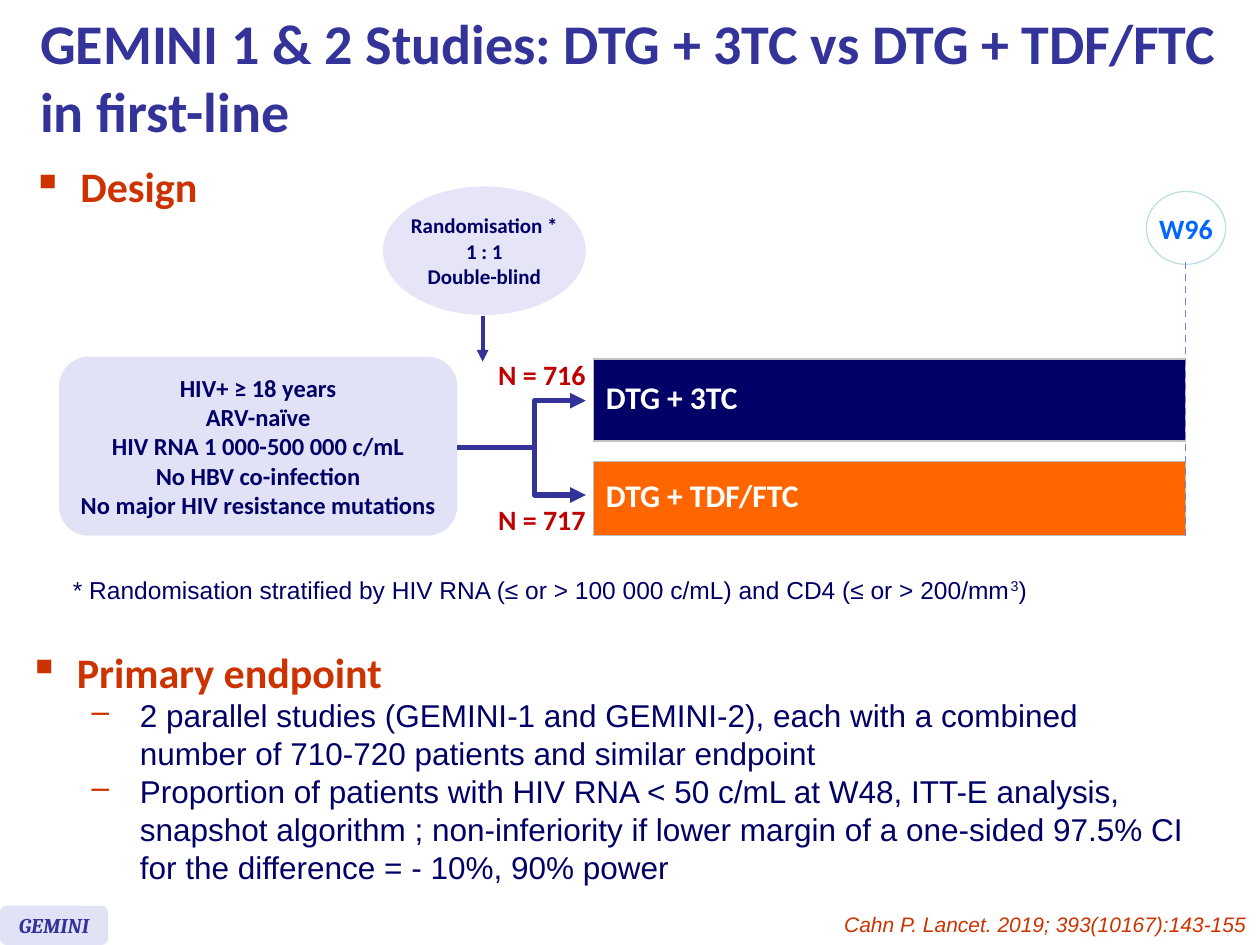
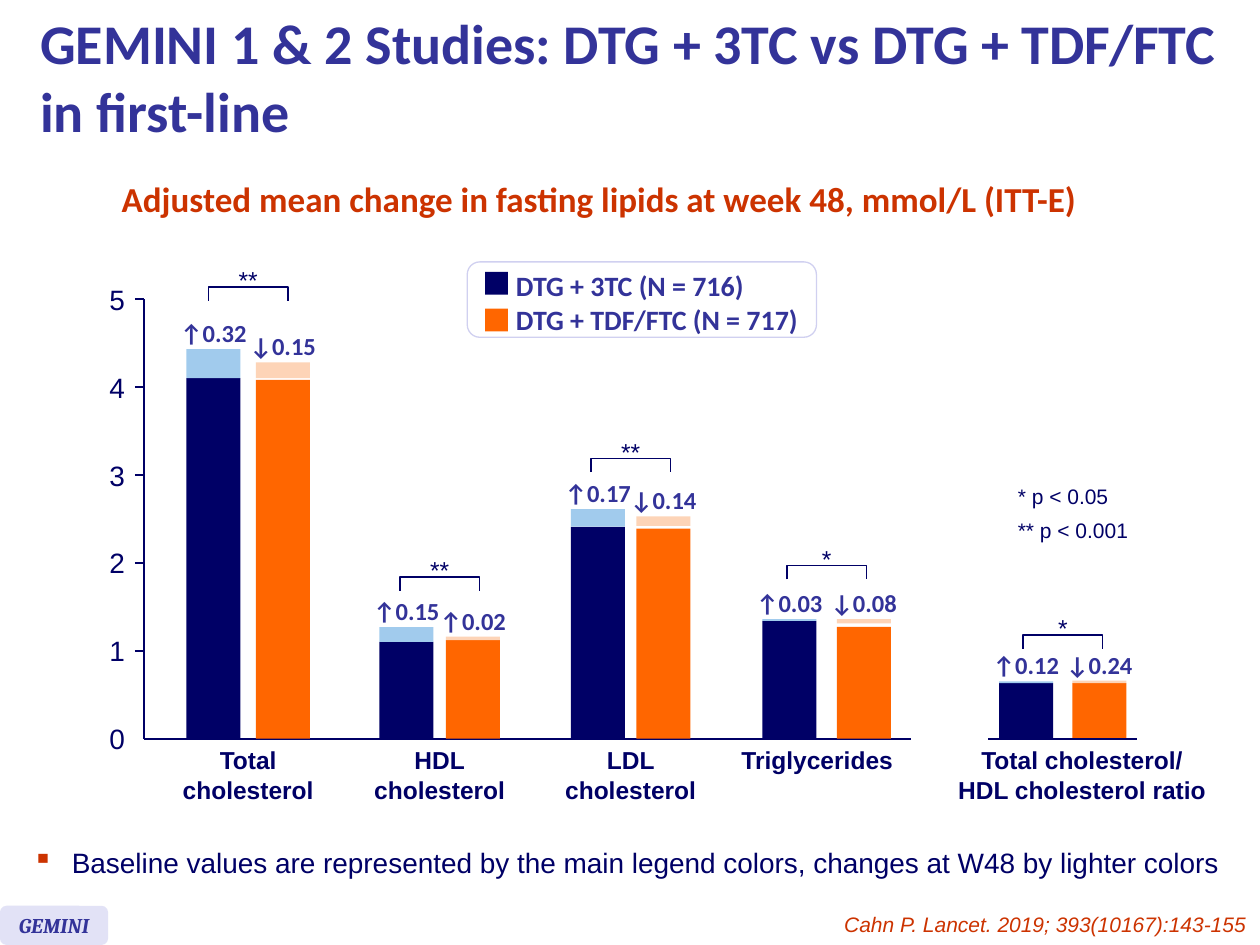
from collections import namedtuple
from dataclasses import dataclass

from lxml import etree
from pptx import Presentation
from pptx.dml.color import RGBColor
from pptx.enum.dml import MSO_LINE
from pptx.enum.shapes import MSO_CONNECTOR, MSO_SHAPE
from pptx.enum.text import MSO_ANCHOR, PP_ALIGN
from pptx.oxml.ns import qn
from pptx.util import Cm, Pt

LEFT, CENTER, RIGHT = PP_ALIGN.LEFT, PP_ALIGN.CENTER, PP_ALIGN.RIGHT
TOP, MIDDLE = MSO_ANCHOR.TOP, MSO_ANCHOR.MIDDLE
RECTANGLE, ROUNDED, OVAL = MSO_SHAPE.RECTANGLE, MSO_SHAPE.ROUNDED_RECTANGLE, MSO_SHAPE.OVAL
BRACKET = MSO_SHAPE.RIGHT_BRACKET
STRAIGHT, ELBOW = MSO_CONNECTOR.STRAIGHT, MSO_CONNECTOR.ELBOW
DASH = MSO_LINE.DASH

Box = namedtuple("Box", "left top width height")
Style = namedtuple("Style", "size font color bold italic", defaults=(False, False))
Group = namedtuple("Group", "name name_shift lefts baselines change_starts tops changes stars bracket")


@dataclass(frozen=True)
class Theme:
    navy: str = "000066"
    indigo: str = "333399"
    orange: str = "FF6600"
    red: str = "CC3300"
    white: str = "FFFFFF"
    lavender: str = "E2E2F6"
    pale_lavender: str = "E5E5F7"
    legend_line: str = "D0D0F0"
    light_blue: str = "A1CBED"
    light_orange: str = "FDD4B7"
    week_line: str = "BBE0E3"
    dash_line: str = "7E7ED4"
    table_line: str = "C0C0C0"
    title: Style = Style(32, "Calibri", "333399", True)
    heading: Style = Style(24, "Calibri", "CC3300", True)
    chart_title: Style = Style(20, "Calibri", "CC3300", True)
    body: Style = Style(18, "Arial", "000066")
    arm: Style = Style(18, "Calibri", "FFFFFF", True)
    count: Style = Style(16, "Calibri", "C00000", True)
    week: Style = Style(16, "Calibri", "0066FF", True)
    legend: Style = Style(16, "Calibri", "333399", True)
    axis: Style = Style(16, "Arial", "000066")
    criteria: Style = Style(14, "Calibri", "000066", True)
    change: Style = Style(14, "Calibri", "333399", True)
    category: Style = Style(14, "Arial", "000066", True)
    note: Style = Style(14, "Arial", "000066")
    small: Style = Style(12, "Arial", "000066")
    randomisation: Style = Style(12, "Calibri", "000066", True)
    badge: Style = Style(12, "Cambria", "333399", True, True)
    citation: Style = Style(12, "Arial", "CC3300", False, True)


THEME = Theme()
TITLE = "GEMINI 1 & 2 Studies: DTG + 3TC vs DTG + TDF/FTC in first-line"
CITATION = "Cahn P. Lancet. 2019; 393(10167):143-155"
CRITERIA = ["HIV+ ≥ 18 years", "ARV-naïve", "HIV RNA 1 000-500 000 c/mL",
            "No HBV co-infection", "No major HIV resistance mutations"]
ENDPOINTS = [
    "2 parallel studies (GEMINI-1 and GEMINI-2), each with a combined number of "
    "710-720 patients and similar endpoint",
    "Proportion of patients with HIV RNA < 50 c/mL at W48, ITT-E analysis, snapshot algorithm ; "
    "non-inferiority if lower margin of a one-sided 97.5% CI for the difference = - 10%, 90% power",
]
LIPIDS = [
    Group("Total\ncholesterol", 0, (0.86, 2.26), (4.1, 4.08), (4.1, 4.1), (4.43, 4.28),
          ("↑0.32", "↓0.15"), "**", 5.06),
    Group("HDL\ncholesterol", 0, (4.75, 6.09), (1.1, 1.12), (1.1, 1.12), (1.27, 1.16),
          ("↑0.15", "↑0.02"), "**", 1.76),
    Group("LDL\ncholesterol", 0, (8.61, 9.93), (2.41, 2.39), (2.41, 2.42), (2.61, 2.53),
          ("↑0.17", "↓0.14"), "**", 3.11),
    Group("Triglycerides", -0.19, (12.47, 13.97), (1.34, 1.27), (1.34, 1.31), (1.36, 1.36),
          ("↑0.03", "↓0.08"), "*", 1.89),
    Group("Total cholesterol/\nHDL cholesterol ratio", 0.39, (17.24, 18.72), (0.63, 0.63),
          (0.63, 0.63), (0.65, 0.66), ("↑0.12", "↓0.24"), "*", 1.1),
]


def rgb(color):
    return RGBColor.from_string(color)


def lengths(box):
    return [Cm(value) for value in box]


def inside(box, left, top, width, height):
    return Box(box.left + left, box.top + top, width, height)


def apply_style(paragraph, style, align=LEFT):
    paragraph.alignment = align
    font = paragraph.font
    font.size, font.name = Pt(style.size), style.font
    font.bold, font.italic = style.bold, style.italic
    font.color.rgb = rgb(style.color)


def fill_text(frame, lines, style, align=LEFT, anchor=TOP, wrap=False):
    frame.word_wrap = wrap
    frame.vertical_anchor = anchor
    for index, line in enumerate(lines):
        paragraph = frame.add_paragraph() if index else frame.paragraphs[0]
        paragraph.text = line
        apply_style(paragraph, style, align)


def add_text(slide, box, text, style, align=LEFT, anchor=TOP, wrap=False):
    frame = slide.shapes.add_textbox(*lengths(box)).text_frame
    fill_text(frame, [text], style, align, anchor, wrap)
    return frame


def add_bullet(paragraph, text, mark, margin, hanging, style):
    paragraph.text = text
    properties = paragraph._p.get_or_add_pPr()
    properties.set("marL", str(Cm(margin)))
    properties.set("indent", str(-Cm(hanging)))
    color = etree.SubElement(properties, qn("a:buClr"))
    etree.SubElement(color, qn("a:srgbClr"), val=THEME.red)
    etree.SubElement(properties, qn("a:buChar"), char=mark)
    apply_style(paragraph, style)


def add_bullet_box(slide, box, text, margin, style):
    frame = slide.shapes.add_textbox(*lengths(box)).text_frame
    frame.word_wrap = True
    add_bullet(frame.paragraphs[0], text, "▪", margin, margin, style)
    return frame


def add_shape(slide, kind, box, fill=None, line=None):
    shape = slide.shapes.add_shape(kind, *lengths(box))
    shape.shadow.inherit = False
    if fill:
        shape.fill.solid()
        shape.fill.fore_color.rgb = rgb(fill)
    else:
        shape.fill.background()
    if line:
        shape.line.color.rgb = rgb(line)
        shape.line.width = Pt(0.75)
    else:
        shape.line.fill.background()
    return shape


def add_line(slide, start, end, color, width, kind=STRAIGHT, arrow=False):
    connector = slide.shapes.add_connector(kind, *lengths(start + end))
    connector.line.color.rgb = rgb(color)
    connector.line.width = Pt(width)
    if arrow:
        etree.SubElement(connector.line._get_or_add_ln(), qn("a:tailEnd"), type="triangle")
    etree.SubElement(connector._element.spPr, qn("a:effectLst"))
    return connector


def set_bend(connector, percent):
    geometry = connector._element.spPr.find(qn("a:prstGeom"))
    for guides in geometry.findall(qn("a:avLst")):
        geometry.remove(guides)
    guides = etree.SubElement(geometry, qn("a:avLst"))
    etree.SubElement(guides, qn("a:gd"), name="adj1", fmla=f"val {percent * 1000}")


def add_frame(presentation):
    slide = presentation.slides.add_slide(presentation.slide_layouts[6])
    add_text(slide, Box(0.56, 0, 24.84, 3.07), TITLE, THEME.title, anchor=MIDDLE, wrap=True)
    badge = add_shape(slide, ROUNDED, Box(0, 18.26, 2.18, 0.79), THEME.lavender)
    fill_text(badge.text_frame, ["GEMINI"], THEME.badge, CENTER, MIDDLE)
    add_text(slide, Box(4.27, 18.26, 21.11, 0.76), CITATION, THEME.citation, RIGHT, wrap=True)
    return slide


def add_arm(slide, box, name, fill):
    table = slide.shapes.add_table(1, 1, *lengths(box)).table
    table.first_row = table.horz_banding = False
    cell = table.cell(0, 0)
    fill_text(cell.text_frame, [name], THEME.arm, wrap=True)
    cell.text_frame.paragraphs[0].line_spacing = 0.8
    cell.vertical_anchor = MIDDLE
    properties = cell._tc.get_or_add_tcPr()
    for side in ("a:lnL", "a:lnR", "a:lnT", "a:lnB"):
        border = etree.SubElement(properties, qn(side), w=str(Pt(1)))
        solid = etree.SubElement(border, qn("a:solidFill"))
        etree.SubElement(solid, qn("a:srgbClr"), val=THEME.table_line)
    cell.fill.solid()
    cell.fill.fore_color.rgb = rgb(fill)


def add_trial_scheme(slide, box):
    population = add_shape(slide, ROUNDED, inside(box, 0, 3.43, 8.03, 3.61), THEME.lavender)
    fill_text(population.text_frame, CRITERIA, THEME.criteria, CENTER, MIDDLE)
    randomisation = add_shape(slide, OVAL, inside(box, 6.53, 0, 4.09, 2.59), THEME.pale_lavender)
    fill_text(randomisation.text_frame, ["Randomisation *", "1 : 1", "Double-blind"],
              THEME.randomisation, CENTER, MIDDLE)
    arrow_x = box.left + 8.54
    add_line(slide, (arrow_x, box.top + 2.62), (arrow_x, box.top + 3.53), THEME.indigo, 2.25, arrow=True)

    arms = [("DTG + 3TC", THEME.navy, 3.48, 1.65, 4.32, "N = 716", 3.33),
            ("DTG + TDF/FTC", THEME.orange, 5.54, 1.5, 6.22, "N = 717", 6.25)]
    for name, fill, top, height, arrow_y, count, count_top in arms:
        add_arm(slide, inside(box, 10.77, top, 11.94, height), name, fill)
        branch = add_line(slide, (box.left + 8.03, box.top + 5.26), (box.left + 10.62, box.top + arrow_y),
                          THEME.indigo, 3, ELBOW, True)
        set_bend(branch, 60)
        add_text(slide, inside(box, 8.59, count_top, 2.29, 0.94), count, THEME.count, CENTER)

    week = add_shape(slide, OVAL, inside(box, 21.92, 0.1, 1.6, 1.47), THEME.white, THEME.week_line)
    fill_text(week.text_frame, ["W96"], THEME.week, CENTER, MIDDLE)
    week_x = box.left + 22.71
    marker = add_line(slide, (week_x, box.top + 1.52), (week_x, box.top + 7.11), THEME.dash_line, 1)
    marker.line.dash_style = DASH


def add_stratification_note(slide, box):
    frame = add_text(slide, box, "* Randomisation stratified by HIV RNA (≤ or > 100 000 c/mL) "
                     "and CD4 (≤ or > 200/mm", THEME.note, wrap=True)
    exponent, closing = (frame.paragraphs[0].add_run() for _ in range(2))
    exponent.text, closing.text = "3", ")"
    exponent._r.get_or_add_rPr().set("baseline", "30000")


def add_endpoint(slide, box):
    frame = add_bullet_box(slide, box, "Primary endpoint", 0.97, THEME.heading)
    for endpoint in ENDPOINTS:
        paragraph = frame.add_paragraph()
        paragraph.level = 1
        add_bullet(paragraph, endpoint, "–", 2.24, 0.97, THEME.body)


def add_axes(slide, box, unit):
    floor = box.top + box.height
    add_line(slide, (box.left, floor), (box.left, box.top), THEME.navy, 1)
    add_line(slide, (box.left, floor), (box.left + 15.47, floor), THEME.navy, 1)
    for value in range(6):
        y = floor - value * unit
        add_text(slide, Box(box.left - 0.97, y - 0.47, 0.84, 0.94), str(value), THEME.axis, RIGHT, MIDDLE)
        if value:
            add_line(slide, (box.left - 0.18, y), (box.left, y), THEME.navy, 1)


def add_lipid_group(slide, box, unit, group):
    floor = box.top + box.height
    bar_width = 1.09
    middle = box.left + (sum(group.lefts) + bar_width) / 2
    colors = [(THEME.navy, THEME.light_blue), (THEME.orange, THEME.light_orange)]
    bars = zip(group.lefts, group.baselines, group.change_starts, group.tops, group.changes, colors)
    for left, baseline, change_start, top, change, (main_color, light_color) in bars:
        x = box.left + left
        for low, high, color in [(0, baseline, main_color), (change_start, top, light_color)]:
            add_shape(slide, RECTANGLE, Box(x, floor - high * unit, bar_width, (high - low) * unit), color)
        add_text(slide, Box(x + bar_width / 2 - 0.93, floor - top * unit - 0.76, 1.86, 0.86),
                 change, THEME.change, CENTER, MIDDLE)
    bracket_y = floor - group.bracket * unit
    bracket = add_shape(slide, BRACKET, Box(middle - 0.14, bracket_y - 0.8, 0.28, 1.6), line=THEME.navy)
    bracket.adjustments[0] = 0
    bracket.rotation = 270
    add_text(slide, Box(middle - 0.45, bracket_y - 0.71, 0.9, 0.86), group.stars, THEME.note, CENTER, MIDDLE)
    name_height = 0.86 + 0.59 * group.name.count("\n")
    add_text(slide, Box(middle + group.name_shift - 3.23, floor, 6.46, name_height),
             group.name, THEME.category, CENTER, MIDDLE)
    return middle


def add_legend(slide, box):
    add_shape(slide, ROUNDED, box, THEME.white, THEME.legend_line)
    entries = [("DTG + 3TC (N = 716)", THEME.navy), ("DTG + TDF/FTC (N = 717)", THEME.orange)]
    for row, (name, color) in enumerate(entries):
        add_shape(slide, RECTANGLE, inside(box, 0.36, 0.2 + 0.74 * row, 0.46, 0.46), color)
        add_text(slide, inside(box, 0.73, 0.69 * row, 6.3, 0.94), name, THEME.legend)


def add_lipid_chart(slide, box):
    unit = box.height / 5
    add_axes(slide, box, unit)
    for group in LIPIDS:
        middle = add_lipid_group(slide, box, unit, group)
    floor = box.top + box.height
    add_line(slide, (middle - 1.5, floor), (middle + 1.5, floor), THEME.navy, 1)
    add_legend(slide, inside(box, 6.52, -0.75, 7.04, 1.52))
    for row, text in enumerate(["* p < 0.05", "** p < 0.001"]):
        frame = add_text(slide, inside(box, 17.62, 3.72 + 0.69 * row, 2.24, 0.51), text, THEME.small)
        frame.margin_left = frame.margin_right = frame.margin_top = frame.margin_bottom = 0


def build_design_slide(presentation):
    slide = add_frame(presentation)
    add_bullet_box(slide, Box(0.4, 3.12, 7.5, 1.6), "Design", 0.97, THEME.heading)
    add_trial_scheme(slide, Box(1.19, 3.76, 23.52, 7.11))
    add_stratification_note(slide, Box(1.22, 11.46, 20.29, 0.86))
    add_endpoint(slide, Box(0.33, 12.9, 23.9, 5.46))


def build_lipids_slide(presentation):
    slide = add_frame(presentation)
    add_text(slide, Box(2.06, 3.45, 20.04, 1.12),
             "Adjusted mean change in fasting lipids at week 48, mmol/L (ITT-E)",
             THEME.chart_title, CENTER, MIDDLE)
    add_lipid_chart(slide, Box(2.9, 6.03, 20.03, 8.86))
    add_bullet_box(slide, Box(0.41, 16.92, 24.84, 0.94),
                   "Baseline values are represented by the main legend colors, changes at W48 by lighter colors",
                   0.79, THEME.axis)


def main():
    presentation = Presentation()
    presentation.slide_width, presentation.slide_height = Cm(25.4), Cm(19.05)
    build_design_slide(presentation)
    build_lipids_slide(presentation)
    presentation.save("out.pptx")


if __name__ == "__main__":
    main()
